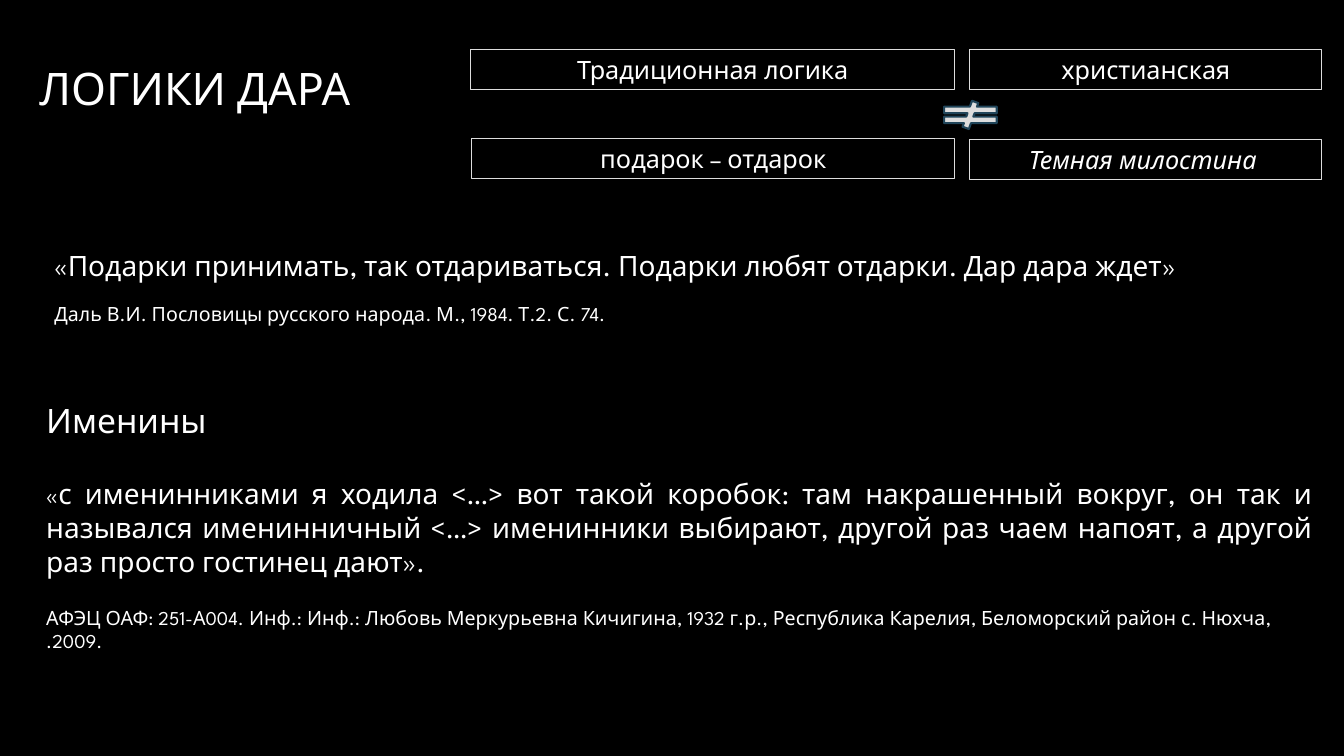
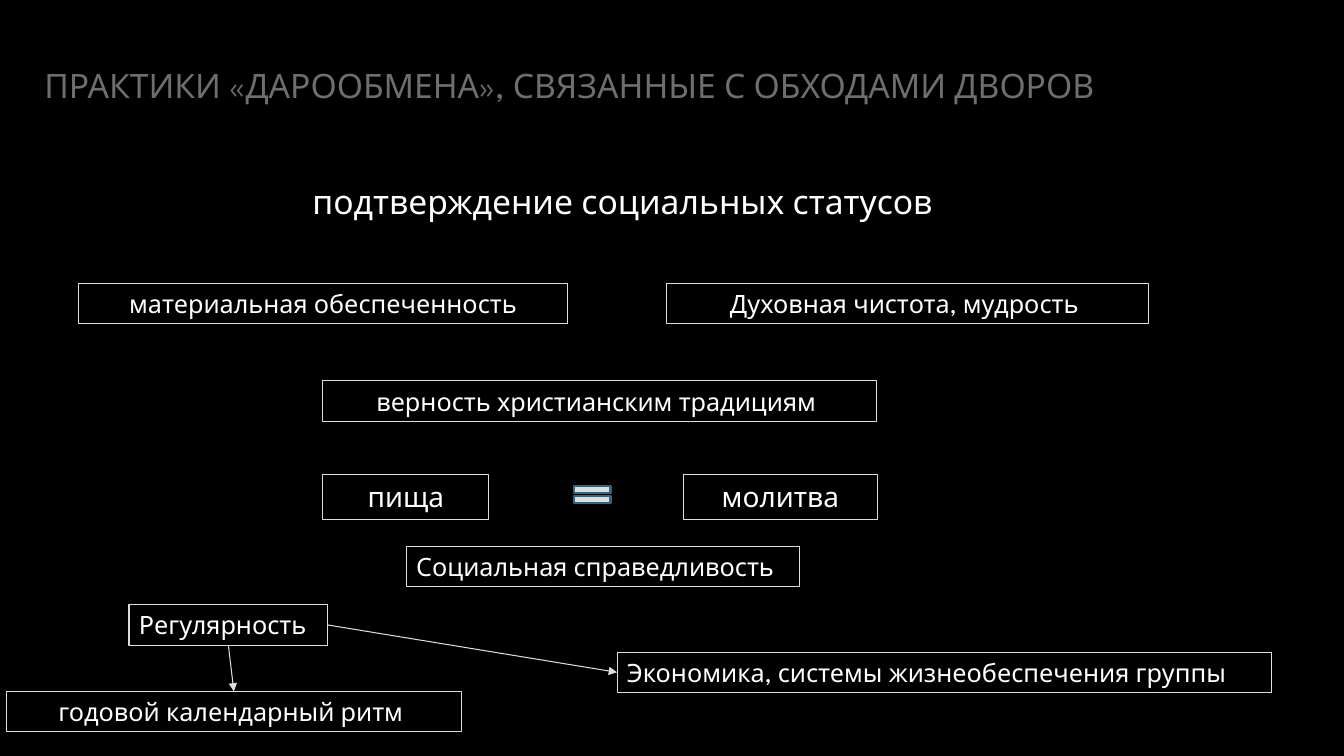
from dataclasses import dataclass

from lxml.etree import SubElement
from pptx import Presentation
from pptx.dml.color import RGBColor
from pptx.enum.shapes import MSO_CONNECTOR, MSO_SHAPE
from pptx.enum.text import MSO_ANCHOR, MSO_AUTO_SIZE, PP_ALIGN
from pptx.oxml.ns import qn
from pptx.presentation import Presentation as Deck
from pptx.shapes.autoshape import Shape
from pptx.slide import Slide
from pptx.util import Inches, Pt

FONT = "League Spartan"
BLACK = RGBColor(0x00, 0x00, 0x00)
WHITE = RGBColor(0xFF, 0xFF, 0xFF)
SILVER = RGBColor(0xA6, 0xA6, 0xA6)
GRAY = RGBColor(0x6E, 0x6E, 0x6E)
LIGHT = RGBColor(0xDD, 0xDD, 0xDD)
NAVY = RGBColor(0x20, 0x45, 0x5A)
BLUE = RGBColor(0x30, 0x66, 0x84)

TITLE_ONLY = 5
TOP, LEFT, BOTTOM, RIGHT = range(4)


@dataclass(frozen=True)
class Box:
    left: float
    top: float
    width: float
    height: float

    def lengths(self) -> tuple[int, int, int, int]:
        return Inches(self.left), Inches(self.top), Inches(self.width), Inches(self.height)


@dataclass(frozen=True)
class Passage:
    text: str
    size: int
    align: PP_ALIGN = PP_ALIGN.LEFT
    gap: int = 0
    opening: str = ""
    opening_size: int = 18
    italic: bool = False


@dataclass(frozen=True)
class Label:
    box: Box
    passage: Passage


def label(text: str, left: float, top: float, width: float, height: float = 0.4,
          size: int = 18, align: PP_ALIGN = PP_ALIGN.CENTER, italic: bool = False) -> Label:
    return Label(Box(left, top, width, height), Passage(text, size, align, italic=italic))


LOGIC_LABELS = (
    label("подарок – отдарок", 4.68, 1.37, 4.79),
    label("Традиционная логика", 4.67, 0.49, 4.8),
    label("христианская", 9.62, 0.49, 3.49),
    label("Темная милостина ", 9.62, 1.38, 3.49, italic=True),
)

PROVERB = (
    Passage("«Подарки принимать, так отдариваться. Подарки любят отдарки. Дар дара ждет»", 20),
    Passage("Даль В.И. Пословицы русского народа. М., 1984. Т.2. С. 74.", 14, gap=14),
)

NAME_DAY = (
    Passage("Именины", 24, PP_ALIGN.JUSTIFY),
    Passage(
        "с именинниками я ходила <…> вот такой коробок: там накрашенный вокруг, "
        "он так и назывался именинничный <…> именинники выбирают, другой раз чаем напоят, "
        "а другой раз просто гостинец дают». ",
        20, PP_ALIGN.JUSTIFY, gap=26, opening="«",
    ),
    Passage(
        "АФЭЦ ОАФ: 251-А004. Инф.: Инф.: Любовь Меркурьевна Кичигина, 1932 г.р., "
        "Республика Карелия, Беломорский район с. Нюхча, .2009.",
        14, gap=20,
    ),
)

STATUS_HEADING = Passage("подтверждение социальных статусов ", 24, PP_ALIGN.CENTER)

STATUS_LABELS = (
    label("материальная обеспеченность", 0.78, 2.81, 4.85),
    label("Духовная чистота, мудрость ", 6.61, 2.81, 4.78),
    label("верность христианским традициям ", 3.2, 3.78, 5.49),
    label("пища", 3.2, 4.71, 1.65, 0.44, size=20),
    label("молитва", 6.78, 4.71, 1.92, 0.44, size=20),
    label("Социальная справедливость", 4.03, 5.42, 3.9, align=PP_ALIGN.LEFT),
)

REGULARITY = label("Регулярность", 1.28, 6, 1.97, align=PP_ALIGN.LEFT)
CALENDAR = label("годовой календарный ритм ", 0.06, 6.86, 4.52)
ECONOMY = label("Экономика, системы жизнеобеспечения группы", 6.12, 6.47, 6.49,
                align=PP_ALIGN.LEFT)


def add_slide(presentation: Deck, title: str, box: Box, size: int, color: RGBColor) -> Slide:
    slide = presentation.slides.add_slide(presentation.slide_layouts[TITLE_ONLY])
    shape = slide.shapes.title
    shape.left, shape.top, shape.width, shape.height = box.lengths()
    frame = shape.text_frame
    frame.text = title
    frame.auto_size = MSO_AUTO_SIZE.NONE
    frame.vertical_anchor = MSO_ANCHOR.MIDDLE
    paragraph = frame.paragraphs[0]
    paragraph.alignment = PP_ALIGN.LEFT
    paragraph.font.name = FONT
    paragraph.font.size = Pt(size)
    paragraph.font.color.rgb = color
    return slide


def fade_title(slide: Slide) -> None:
    fill = slide.shapes.title.text_frame.paragraphs[0].runs[0].font.fill
    fill.gradient()
    fill.gradient_angle = 267
    for stop, color in zip(fill.gradient_stops, (WHITE, SILVER)):
        stop.color.rgb = color


def add_text(slide: Slide, box: Box, *passages: Passage) -> Shape:
    shape = slide.shapes.add_textbox(*box.lengths())
    frame = shape.text_frame
    frame.word_wrap = True
    frame.auto_size = MSO_AUTO_SIZE.SHAPE_TO_FIT_TEXT
    for index, passage in enumerate(passages):
        paragraph = frame.add_paragraph() if index else frame.paragraphs[0]
        paragraph.alignment = passage.align
        if passage.gap:
            paragraph.space_before = Pt(passage.gap)
        paragraph.font.name = FONT
        paragraph.font.size = Pt(passage.size)
        paragraph.font.color.rgb = WHITE
        if passage.italic:
            paragraph.font.italic = True
        if passage.opening:
            opening = paragraph.add_run()
            opening.text = passage.opening
            opening.font.size = Pt(passage.opening_size)
        paragraph.add_run().text = passage.text
    return shape


def add_label(slide: Slide, item: Label) -> Shape:
    shape = add_text(slide, item.box, item.passage)
    shape.line.color.rgb = LIGHT
    shape.line.width = Pt(0.75)
    return shape


def add_sign(slide: Slide, kind: MSO_SHAPE, box: Box, outline: RGBColor) -> None:
    shape = slide.shapes.add_shape(kind, *box.lengths())
    shape.shadow.inherit = False
    shape.fill.solid()
    shape.fill.fore_color.rgb = LIGHT
    shape.line.color.rgb = outline
    shape.line.width = Pt(1.5)


def add_arrow(slide: Slide, start: Shape, start_site: int, end: Shape, end_site: int) -> None:
    connector = slide.shapes.add_connector(MSO_CONNECTOR.STRAIGHT, 0, 0, 0, 0)
    connector.begin_connect(start, start_site)
    connector.end_connect(end, end_site)
    connector.line.color.rgb = LIGHT
    connector.line.width = Pt(0.75)
    properties = connector._element.spPr
    SubElement(properties.find(qn("a:ln")), qn("a:tailEnd"), type="triangle")
    SubElement(properties, qn("a:effectLst"))


def build_logic_slide(presentation: Deck) -> None:
    slide = add_slide(presentation, "ЛОГИКИ ДАРА", Box(0.29, 0.23, 10.83, 1.28), 32, WHITE)
    fade_title(slide)
    add_text(slide, Box(0.44, 2.42, 12.59, 1.21), *PROVERB)
    add_text(slide, Box(0.36, 3.92, 12.75, 2.69), *NAME_DAY)
    for item in LOGIC_LABELS:
        add_label(slide, item)
    add_sign(slide, MSO_SHAPE.MATH_NOT_EQUAL, Box(9.27, 1, 0.71, 0.28), NAVY)


def build_status_slide(presentation: Deck) -> None:
    slide = add_slide(presentation, "ПРАКТИКИ «ДАРООБМЕНА», СВЯЗАННЫЕ С ОБХОДАМИ ДВОРОВ",
                      Box(0.34, 0.24, 12.54, 1.21), 24, GRAY)
    add_text(slide, Box(2.89, 1.75, 6.65, 0.5), STATUS_HEADING)
    for item in STATUS_LABELS:
        add_label(slide, item)
    add_sign(slide, MSO_SHAPE.MATH_EQUAL, Box(5.63, 4.76, 0.49, 0.29), BLUE)
    regularity, calendar, economy = (
        add_label(slide, item) for item in (REGULARITY, CALENDAR, ECONOMY)
    )
    add_arrow(slide, regularity, RIGHT, economy, LEFT)
    add_arrow(slide, regularity, BOTTOM, calendar, TOP)


def main() -> None:
    presentation = Presentation()
    presentation.slide_width = Inches(13.33)
    presentation.slide_height = Inches(7.5)
    background = presentation.slide_master.background.fill
    background.solid()
    background.fore_color.rgb = BLACK
    build_logic_slide(presentation)
    build_status_slide(presentation)
    presentation.save("out.pptx")


if __name__ == "__main__":
    main()
